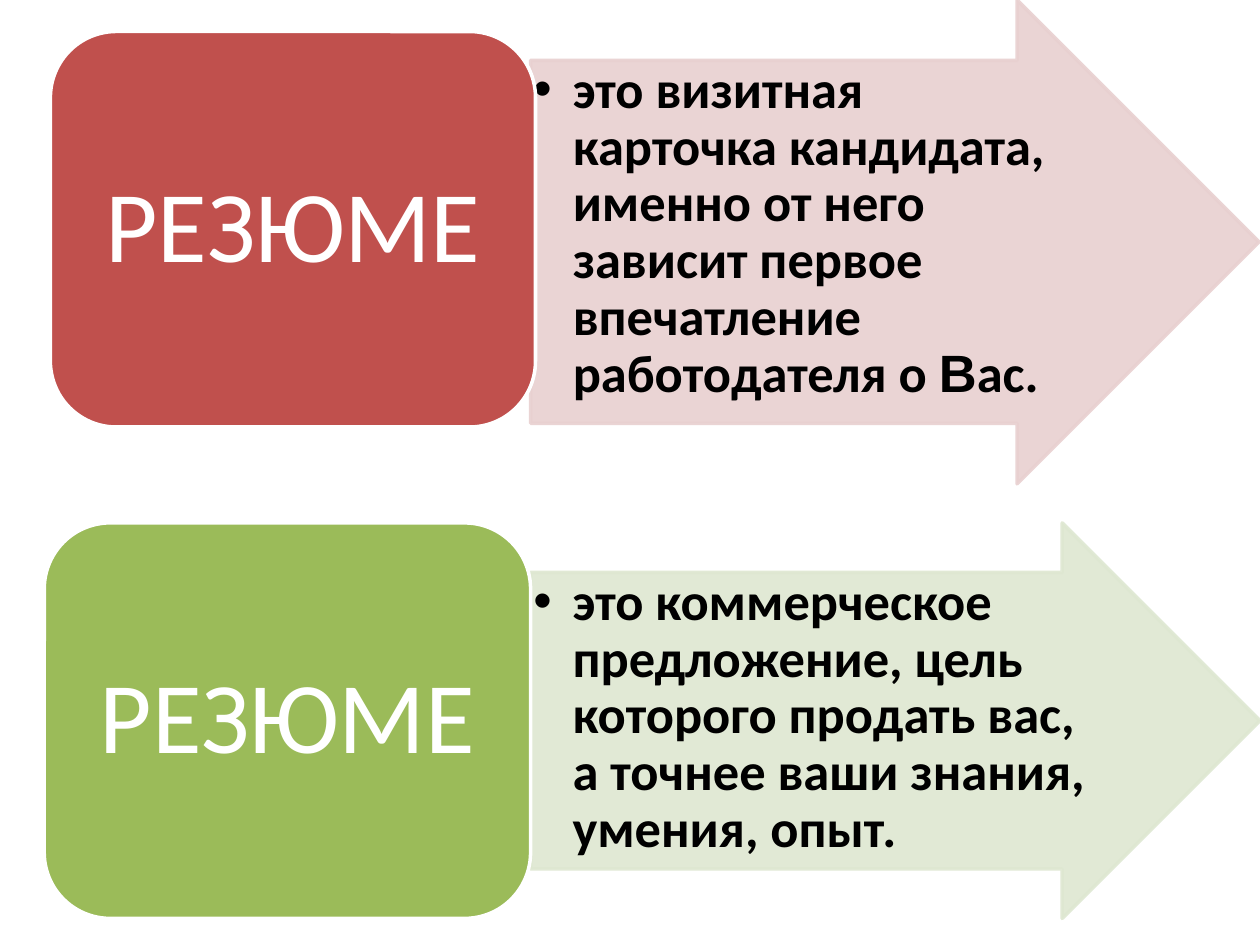
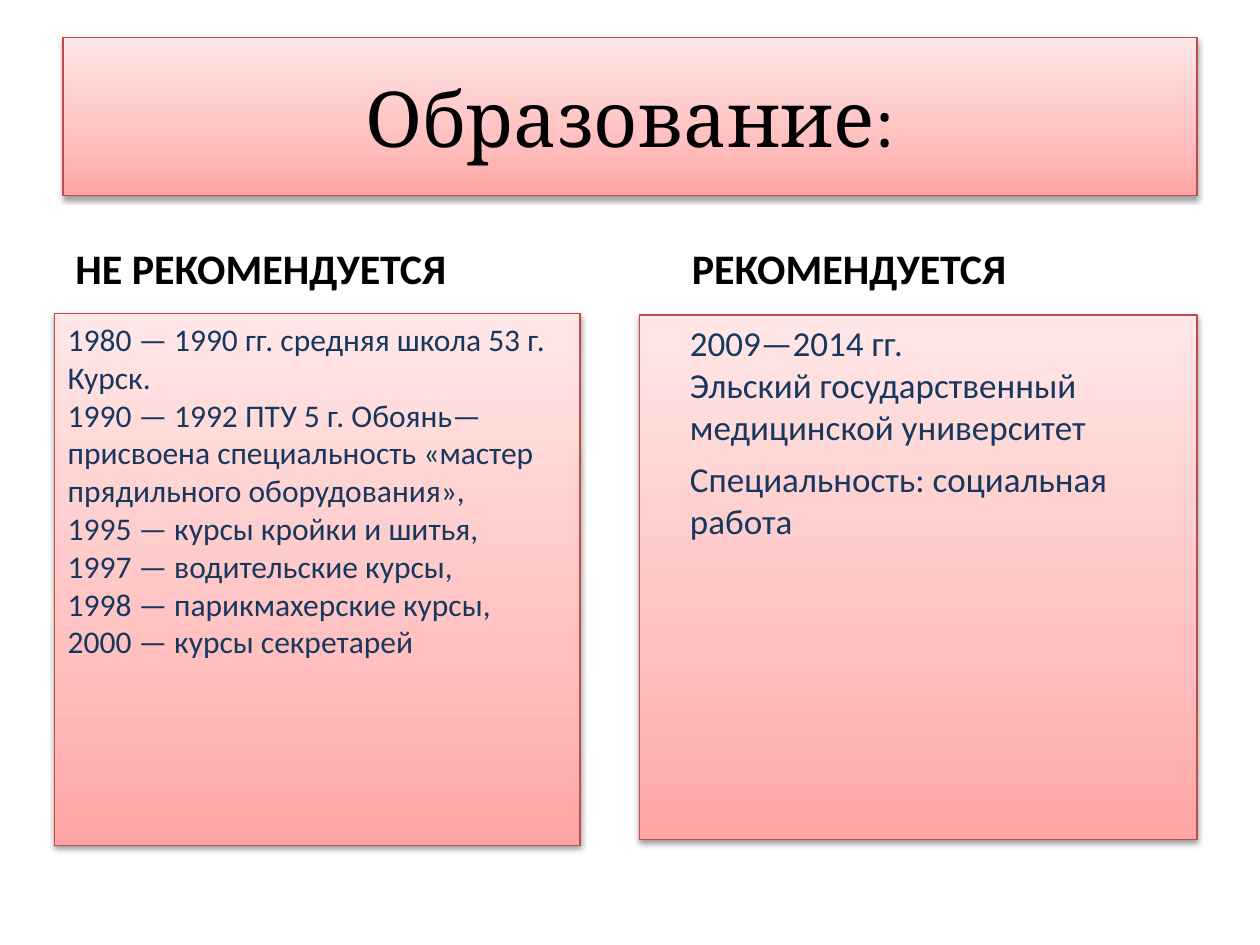
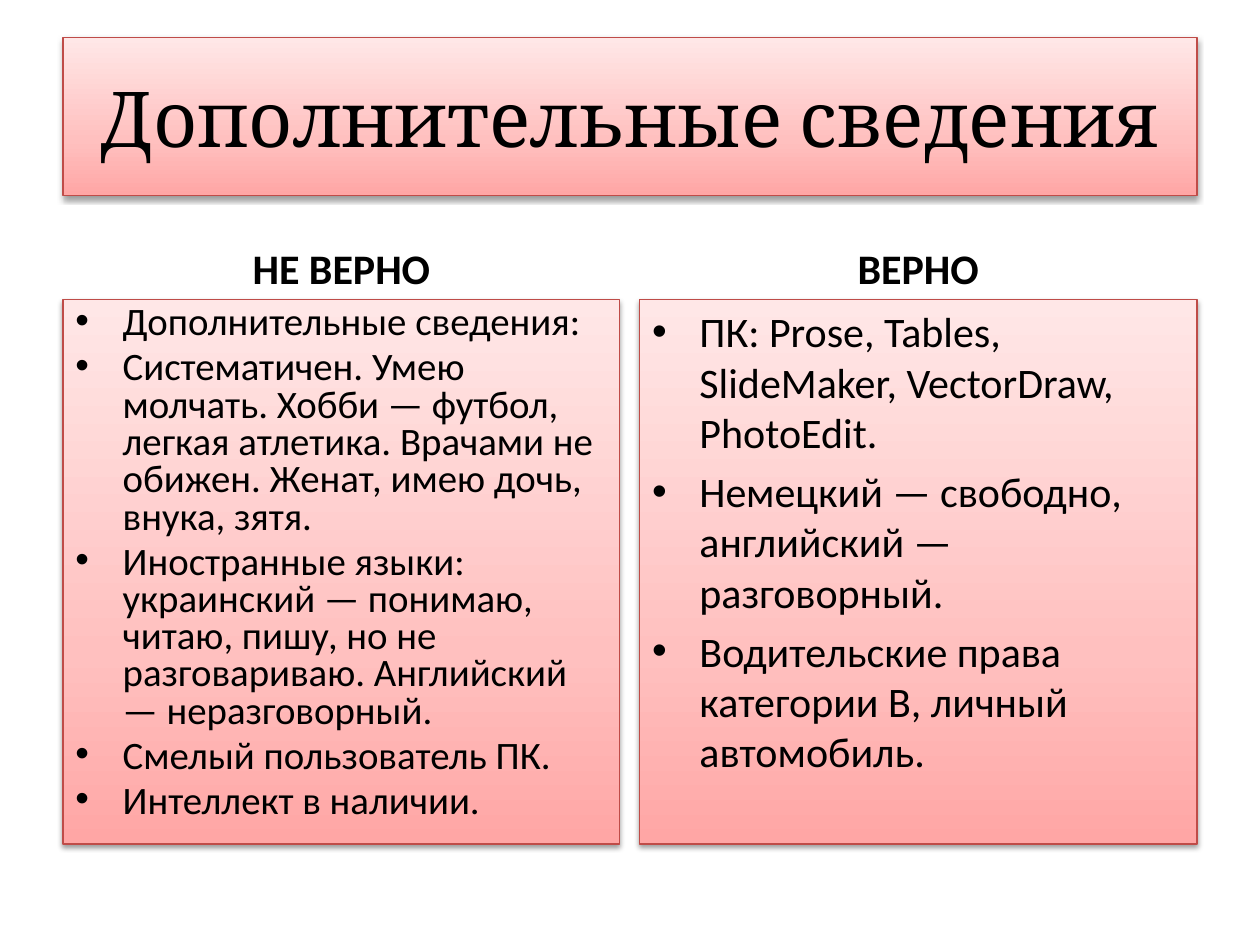
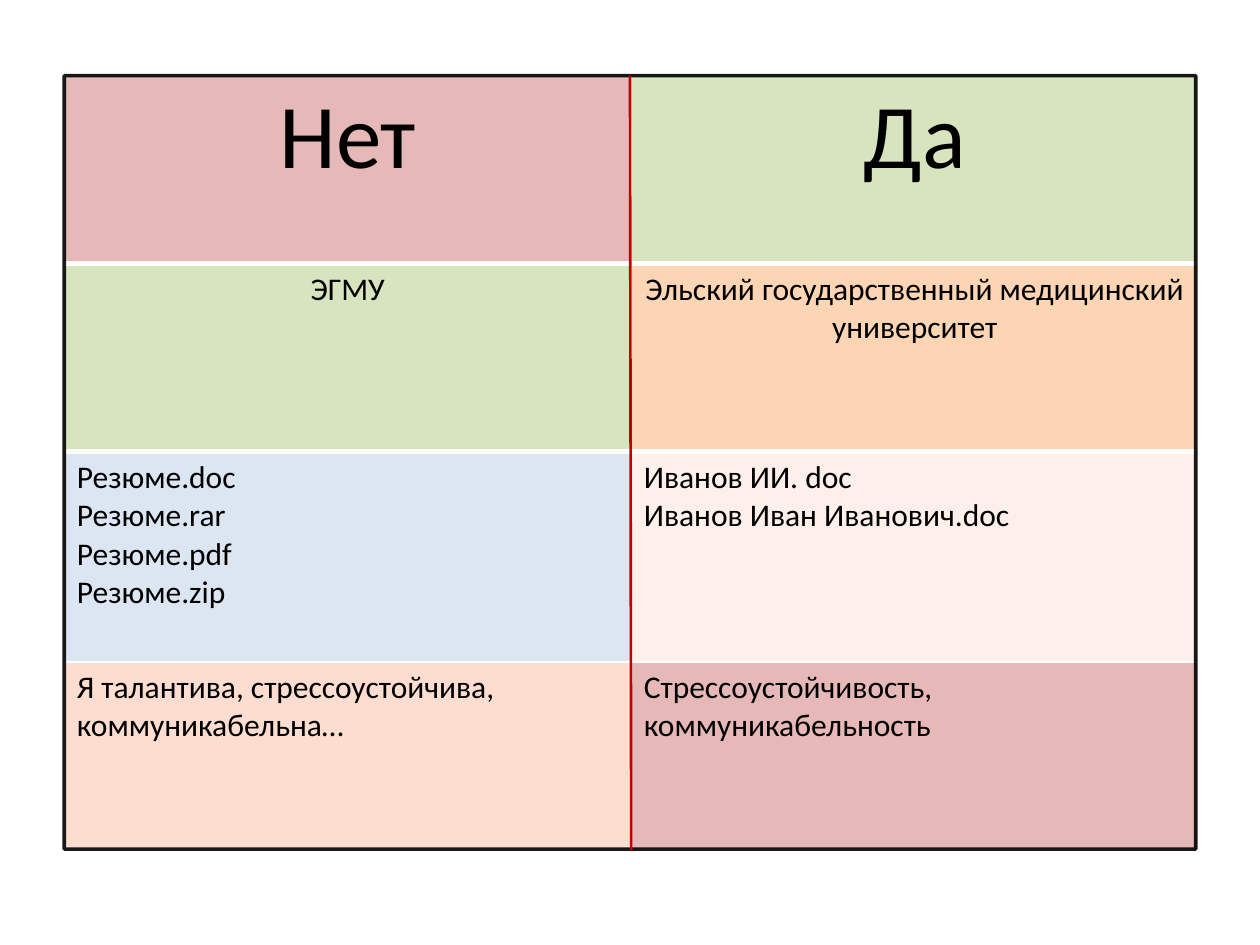
"""Build four slides of advice on writing a résumé."""
import lxml.etree
import pptx
import pptx.dml.color
import pptx.enum.shapes
import pptx.enum.text
import pptx.oxml
import pptx.oxml.ns
import pptx.util

Pt = pptx.util.Pt
hue = pptx.dml.color.RGBColor.from_string
qn = pptx.oxml.ns.qn
Kind = pptx.enum.shapes.MSO_SHAPE
Align = pptx.enum.text.PP_ALIGN
Anchor = pptx.enum.text.MSO_ANCHOR
LEFT, MID = {"alignment": Align.LEFT}, {"alignment": Align.CENTER}
TOP = {"vertical_anchor": Anchor.TOP, "word_wrap": True}
CENTER = {"vertical_anchor": Anchor.MIDDLE, "word_wrap": True}
LOW = {"vertical_anchor": Anchor.BOTTOM, "word_wrap": True}
NS = 'xmlns:a="http://schemas.openxmlformats.org/drawingml/2006/main"'
GRAD = f"""<a:gradFill {NS} rotWithShape="1"><a:gsLst>
<a:gs pos="0"><a:srgbClr val="FFA6A5"/></a:gs>
<a:gs pos="35000"><a:srgbClr val="FFC0BF"/></a:gs>
<a:gs pos="100000"><a:srgbClr val="FFE7E7"/></a:gs>
</a:gsLst><a:lin ang="16200000" scaled="1"/></a:gradFill>"""
SHADE = f"""<a:effectLst {NS}><a:outerShdw blurRad="40000" dist="20000" dir="5400000" rotWithShape="0">
<a:srgbClr val="000000"><a:alpha val="38000"/></a:srgbClr></a:outerShdw></a:effectLst>"""


def put(frame, lines, box, para, size, color="000000", face="Calibri", bold=False, left=0, bullet=False):
    """Fill a text frame; a bar splits runs and a newline breaks a line."""
    for key, val in box.items():
        setattr(frame, key, val)
    for num, line in enumerate(lines):
        item = frame.add_paragraph() if num else frame.paragraphs[0]
        for row, words in enumerate(line.split("\n")):
            if row:
                item.add_line_break()
            for part in words.split("|"):
                item.add_run().text = part
        for key, val in para.items():
            setattr(item, key, val)
        for run in item.runs:
            for key, val in {"name": face, "size": Pt(size), "bold": bold}.items():
                setattr(run.font, key, val)
            run.font.color.rgb = hue(color)
        props = item._p.get_or_add_pPr()
        if left:
            props.set("marL", str(Pt(left)))
            props.set("indent", str(Pt(-left if bullet else 0)))
        if bullet:
            lxml.etree.SubElement(props, qn("a:buFont")).set("typeface", "Arial")
            lxml.etree.SubElement(props, qn("a:buChar")).set("char", "•")


def glow(shape):
    """Give a shape the pink gradient, red line and soft shadow."""
    props = shape._element.spPr
    props.append(pptx.oxml.parse_xml(GRAD))
    shape.line.color.rgb = hue("BF4C48")
    shape.line.width = Pt(0.75)
    props.append(pptx.oxml.parse_xml(SHADE))


deck = pptx.Presentation()
deck.slide_width, deck.slide_height = Pt(720), Pt(540)

slide = deck.slides.add_slide(deck.slide_layouts[6])
thin = {f"margin_{side}": Pt(1.6) for side in ("left", "top", "right", "bottom")}
wide = {"margin_left": Pt(17.4), "margin_right": Pt(17.4)}
claims = [
    ((303.2, 0, 416.2, 276.5), "E8D0D0", (28.8, 18, 277.2, 226), "C0504D",
     "это визитная карточка кандидата, именно от него зависит первое впечатление работодателя о |В|ас."),
    ((303.2, 298.8, 416.8, 226), "DEE7D1", (25.3, 298.8, 277.9, 226), "9BBB59",
     "это коммерческое предложение, цель которого продать вас, а точнее ваши знания, умения, опыт."),
]
for span, pale, area, deep, claim in claims:
    arrow = slide.shapes.add_shape(Kind.RIGHT_ARROW, *map(Pt, span))
    arrow.adjustments[0], arrow.adjustments[1] = 0.75, 0.5
    label = slide.shapes.add_shape(Kind.ROUNDED_RECTANGLE, *map(Pt, area))
    for shape, fill, edge in ((arrow, pale, pale), (label, deep, "FFFFFF")):
        shape.shadow.inherit = False
        shape.fill.solid()
        shape.fill.fore_color.rgb = hue(fill)
        shape.line.color.rgb = hue(edge)
        shape.line.width = Pt(2)
    for tone in arrow._element.spPr.iter(qn("a:srgbClr")):
        lxml.etree.SubElement(tone, qn("a:alpha")).set("val", "90000")
    put(arrow.text_frame, [claim], TOP | thin, LEFT | {"line_spacing": 0.9}, 30, bold=True, left=22.5, bullet=True)
    for run in arrow.text_frame.paragraphs[0].runs[1:2]:
        run.font.name = "Arial"
    put(label.text_frame, ["РЕЗЮМЕ"], CENTER | wide, MID | {"line_spacing": 0.9}, 58, "FFFFFF")

navy = {"color": "17375E"}
dots = {"left": 27, "bullet": True}
pairs = [
    ("Образование:", LEFT, [
        ("НЕ РЕКОМЕНДУЕТСЯ", 36, (31, 179.3, 300.5, 303.8), 18, {}, navy | {"left": 0.6}, [
            "1980 — 1990 гг. средняя школа 53 г. Курск.\n"
            "1990 — 1992 ПТУ 5 г. Обоянь— присвоена специальность «мастер прядильного оборудования»,\n"
            "1995 — курсы кройки и шитья,\n1997 — водительские курсы,\n"
            "1998 — парикмахерские курсы,\n2000 — курсы секретарей"]),
        ("РЕКОМЕНДУЕТСЯ", 388.3, (365.6, 180, 318.4, 299.6), 20, {"space_before": Pt(5.8)}, navy | {"left": 21.6}, [
            "2009—2014 гг.\nЭльский государственный медицинской университет",
            "Специальность: социальная работа"]),
    ]),
    ("Дополнительные сведения", MID, [
        ("НЕ ВЕРНО", 36, (36, 171.3, 318.2, 311), 22.2, {"line_spacing": 0.8, "space_before": Pt(4.4)}, dots, [
            "Дополнительные сведения:",
            "Систематичен. Умею молчать. Хобби — футбол, легкая атлетика. "
            "Врачами не обижен. Женат, имею дочь, внука, зятя.",
            "Иностранные языки: украинский — понимаю, читаю, пишу, но не разговариваю. "
            "Английский — неразговорный.",
            "Смелый пользователь ПК.",
            "Интеллект в наличии."]),
        ("ВЕРНО", 365.6, (365.6, 171.3, 318.4, 311), 24, {"space_before": Pt(4.8)}, dots, [
            "ПК: Prose, Tables, SlideMaker, VectorDraw, PhotoEdit.",
            "Немецкий — свободно, английский — разговорный.",
            "Водительские права категории В, личный автомобиль."]),
    ]),
]
for name, side, halves in pairs:
    slide = deck.slides.add_slide(deck.slide_layouts[5])
    title = slide.shapes.title
    for key, val in {"left": 36, "top": 21.6, "width": 648, "height": 90}.items():
        setattr(title, key, Pt(val))
    glow(title)
    put(title.text_frame, [name], CENTER, MID, 44, face="Cambria")
    for head, x, area, size, gaps, look, lines in halves:
        note = slide.shapes.add_textbox(Pt(x), Pt(120.6), Pt(318.2), Pt(50.4))
        put(note.text_frame, [head], LOW, side, 24, bold=True)
        panel = slide.shapes.add_shape(Kind.RECTANGLE, *map(Pt, area))
        glow(panel)
        put(panel.text_frame, lines, TOP, LEFT | gaps, size, **look)

slide = deck.slides.add_slide(deck.slide_layouts[6])
rows = [
    (107.5, 52, MID, ("E6B9B8", ["Нет"]), ("D7E4BD", ["Да"])),
    (107.5, 18, MID, ("D7E4BD", ["ЭГМУ"]), ("FCD5B5", ["Эльский государственный медицинский университет"])),
    (120.2, 18, LEFT, ("DCE6F2", ["Резюме.doc", "Резюме.rar", "Резюме.pdf", "Резюме.zip"]),
     ("FDEFE9", ["Иванов ИИ. doc", "Иванов Иван Иванович.doc"])),
    (107.3, 18, LEFT, ("FCDDCF", ["Я талантива, стрессоустойчива, коммуникабельна…"]),
     ("E6B9B8", ["Стрессоустойчивость, коммуникабельность"])),
]
table = slide.shapes.add_table(4, 2, Pt(36.7), Pt(43.2), Pt(648), Pt(442)).table
for r, (tall, size, side, *cells) in enumerate(rows):
    table.rows[r].height = Pt(tall)
    for c, (fill, lines) in enumerate(cells):
        cell = table.cell(r, c)
        cell.fill.solid()
        cell.fill.fore_color.rgb = hue(fill)
        put(cell.text_frame, lines, {}, side, size)
        for edge in ("lnB", "lnT")[r:r + 1]:
            cell._tc.get_or_add_tcPr().insert(0, pptx.oxml.parse_xml(
                f'<a:{edge} {NS} w="{Pt(3)}"><a:solidFill><a:srgbClr val="FFFFFF"/></a:solidFill></a:{edge}>'))

frame = slide.shapes.add_shape(Kind.RECTANGLE, Pt(36.7), Pt(43.2), Pt(646.6), Pt(442))
frame.shadow.inherit = False
frame.fill.background()
split = slide.shapes.add_connector(pptx.enum.shapes.MSO_CONNECTOR.STRAIGHT, Pt(360), Pt(43.2), Pt(360.7), Pt(486))
lxml.etree.SubElement(split._element.spPr, qn("a:effectLst"))
for shape, edge, width in ((frame, "000000", 2), (split, "C00000", 1.5)):
    shape.line.color.rgb = hue(edge)
    shape.line.width = Pt(width)
for tone in frame._element.spPr.iter(qn("a:srgbClr")):
    lxml.etree.SubElement(tone, qn("a:alpha")).set("val", "90000")

deck.save("out.pptx")
